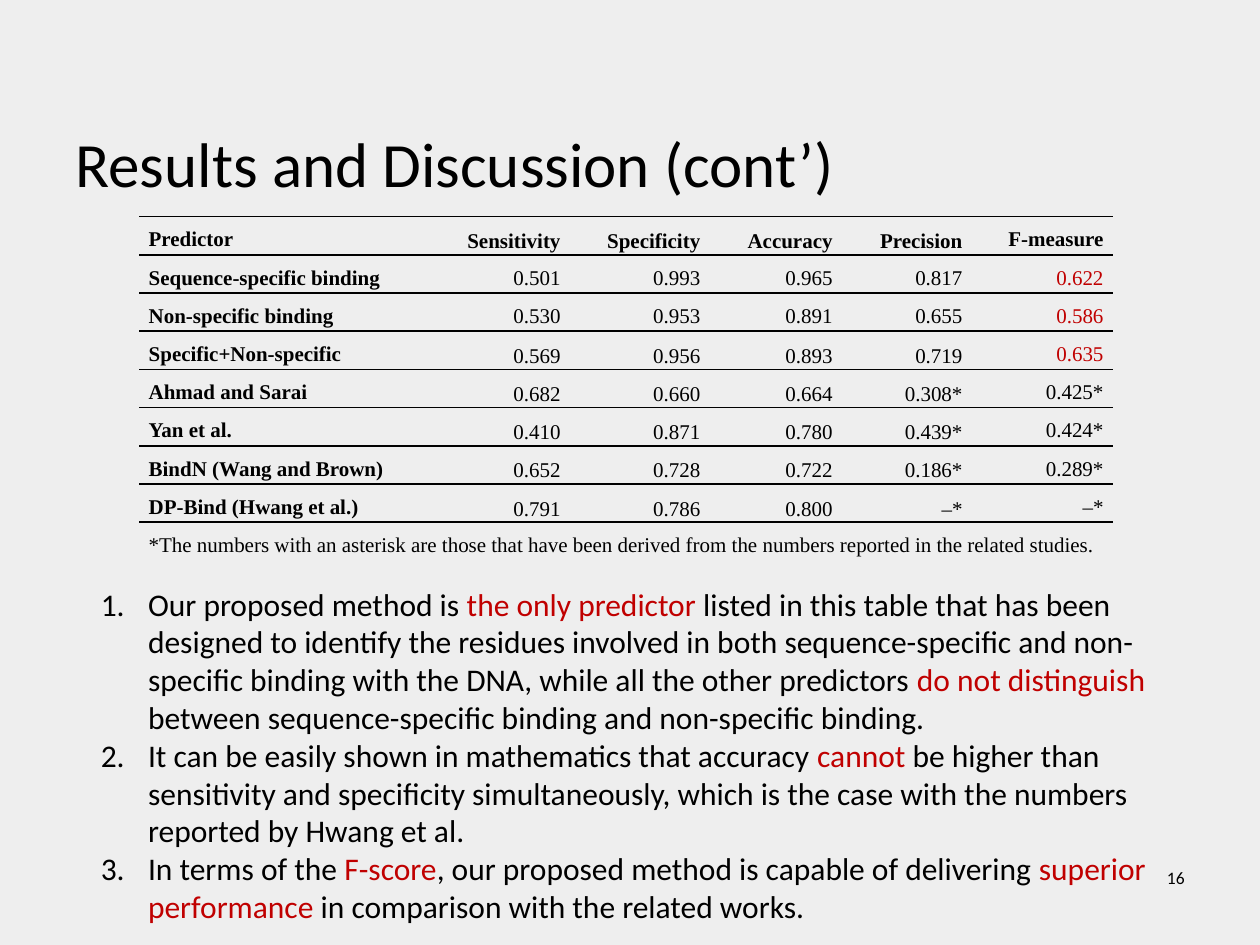
from lxml import etree
from pptx import Presentation
from pptx.dml.color import RGBColor
from pptx.enum.text import MSO_ANCHOR, MSO_AUTO_SIZE, PP_ALIGN
from pptx.oxml.ns import qn
from pptx.util import Pt

TOP, MIDDLE, BOTTOM = MSO_ANCHOR.TOP, MSO_ANCHOR.MIDDLE, MSO_ANCHOR.BOTTOM
LEFT, RIGHT = PP_ALIGN.LEFT, PP_ALIGN.RIGHT
NO_FIT = MSO_AUTO_SIZE.NONE
SANS, SERIF = "Calibri", "Times New Roman"
BLACK, RED, GRAY = "000000", "C00000", "EEEEEE"

COL_WIDTHS = [170.6, 75.6, 79.9, 75.6, 74.2, 80.6]
ROW_HEIGHT, NOTE_HEIGHT = 21.84, 19.8
HEADER = ["Predictor", "Sensitivity", "Specificity", "Accuracy", "Precision", "F-measure"]
RESULTS = [
    ["Sequence-specific binding", "0.501", "0.993", "0.965", "0.817", "0.622"],
    ["Non-specific binding", "0.530", "0.953", "0.891", "0.655", "0.586"],
    ["Specific+Non-specific", "0.569", "0.956", "0.893", "0.719", "0.635"],
    ["Ahmad and Sarai", "0.682", "0.660", "0.664", "0.308*", "0.425*"],
    ["Yan et al.", "0.410", "0.871", "0.780", "0.439*", "0.424*"],
    ["BindN (Wang and Brown)", "0.652", "0.728", "0.722", "0.186*", "0.289*"],
    ["DP-Bind (Hwang et al.)", "0.791", "0.786", "0.800", "–*", "–*"],
]
NOTE = ("*The numbers with an asterisk are those that have been derived from "
        "the numbers reported in the related studies.")
FINDINGS = [
    "Our proposed method is |the only predictor| listed in this table that has been "
    "designed to identify the residues involved in both sequence-specific and "
    "non-specific binding with the DNA, while all the other predictors "
    "|do not distinguish| between sequence-specific binding and non-specific binding.",
    "It can be easily shown in mathematics that accuracy |cannot| be higher than "
    "sensitivity and specificity simultaneously, which is the case with the numbers "
    "reported by Hwang et al.",
    "In terms of the |F-score|, our proposed method is capable of delivering "
    "|superior performance| in comparison with the related works.",
]


def rgb(color):
    return RGBColor.from_string(color)


def add_text(p, text, size=12, font=SANS, color=BLACK, bold=False, align=LEFT):
    p.alignment = align
    r = p.add_run()
    r.text = text
    r.font.size = Pt(size)
    r.font.name = font
    r.font.bold = bold
    r.font.color.rgb = rgb(color)


def place(sp, left, top, width, height, anchor=TOP):
    sp.left, sp.top, sp.width, sp.height = Pt(left), Pt(top), Pt(width), Pt(height)
    tf = sp.text_frame
    tf.word_wrap = True
    tf.auto_size = NO_FIT
    tf.vertical_anchor = anchor
    return tf


def add_border(cell, index, tag, visible):
    ln = etree.Element(qn(f"a:{tag}"), w=str(Pt(1)))
    if visible:
        fill = etree.SubElement(ln, qn("a:solidFill"))
        etree.SubElement(fill, qn("a:srgbClr"), val=BLACK)
    else:
        etree.SubElement(ln, qn("a:noFill"))
    cell._tc.get_or_add_tcPr().insert(index, ln)


def format_cell(cell, text, ruled_below=True, anchor=TOP, **fmt):
    cell.margin_left = cell.margin_right = Pt(5.4)
    cell.margin_top = cell.margin_bottom = 0
    cell.vertical_anchor = anchor
    cell.fill.background()
    borders = {"lnL": False, "lnR": False, "lnT": True, "lnB": ruled_below}
    for i, (tag, visible) in enumerate(borders.items()):
        add_border(cell, i, tag, visible)
    p = cell.text_frame.paragraphs[0]
    p.line_spacing = 1.5
    add_text(p, text, font=SERIF, **fmt)


def add_results_table(s, left, top):
    rows = [HEADER] + RESULTS
    heights = [ROW_HEIGHT] * len(rows) + [NOTE_HEIGHT]
    table = s.shapes.add_table(len(heights), len(COL_WIDTHS), Pt(left), Pt(top),
                               Pt(sum(COL_WIDTHS)), Pt(sum(heights))).table
    table.first_row = table.horz_banding = False
    for column, width in zip(table.columns, COL_WIDTHS):
        column.width = Pt(width)
    for row, height in zip(table.rows, heights):
        row.height = Pt(height)
    for i, row in enumerate(rows):
        for j, text in enumerate(row):
            inner = 0 < j < len(row) - 1
            format_cell(table.cell(i, j), text,
                        anchor=MIDDLE if inner and i not in (1, 2) else TOP,
                        bold=i == 0 or j == 0,
                        color=RED if j == 5 and i in (1, 2, 3) else BLACK,
                        align=RIGHT if j else LEFT)
    last = len(rows)
    table.cell(last, 0).merge(table.cell(last, len(COL_WIDTHS) - 1))
    for j in range(len(COL_WIDTHS)):
        format_cell(table.cell(last, j), "" if j else NOTE, ruled_below=False)


def add_numbered_list(tf, items):
    for i, item in enumerate(items):
        p = tf.paragraphs[0] if i == 0 else tf.add_paragraph()
        pPr = p._p.get_or_add_pPr()
        pPr.set("marL", str(Pt(27)))
        pPr.set("indent", str(-Pt(27)))
        etree.SubElement(pPr, qn("a:buFont"), typeface="+mj-lt")
        etree.SubElement(pPr, qn("a:buAutoNum"), type="arabicPeriod")
        p.space_before = Pt(0)
        for k, part in enumerate(item.split("|")):
            add_text(p, part, size=18, color=RED if k % 2 else BLACK)


def main():
    prs = Presentation()
    prs.slide_width, prs.slide_height = Pt(720), Pt(540)
    s = prs.slides.add_slide(prs.slide_layouts[1])
    s.background.fill.solid()
    s.background.fill.fore_color.rgb = rgb(GRAY)

    tf = place(s.shapes.title, 36, 28, 648, 90, BOTTOM)
    add_text(tf.paragraphs[0], "Results and Discussion (cont’)", size=36)

    add_results_table(s, 79.6, 123.8)

    tf = place(s.placeholders[1], 50.4, 330.5, 613.4, 203.8)
    add_numbered_list(tf, FINDINGS)

    tf = place(s.shapes.add_textbox(0, 0, 0, 0), 516, 491.8, 168, 37.4)
    add_text(tf.paragraphs[0], "16", size=10, align=RIGHT)

    prs.save("out.pptx")


if __name__ == "__main__":
    main()
